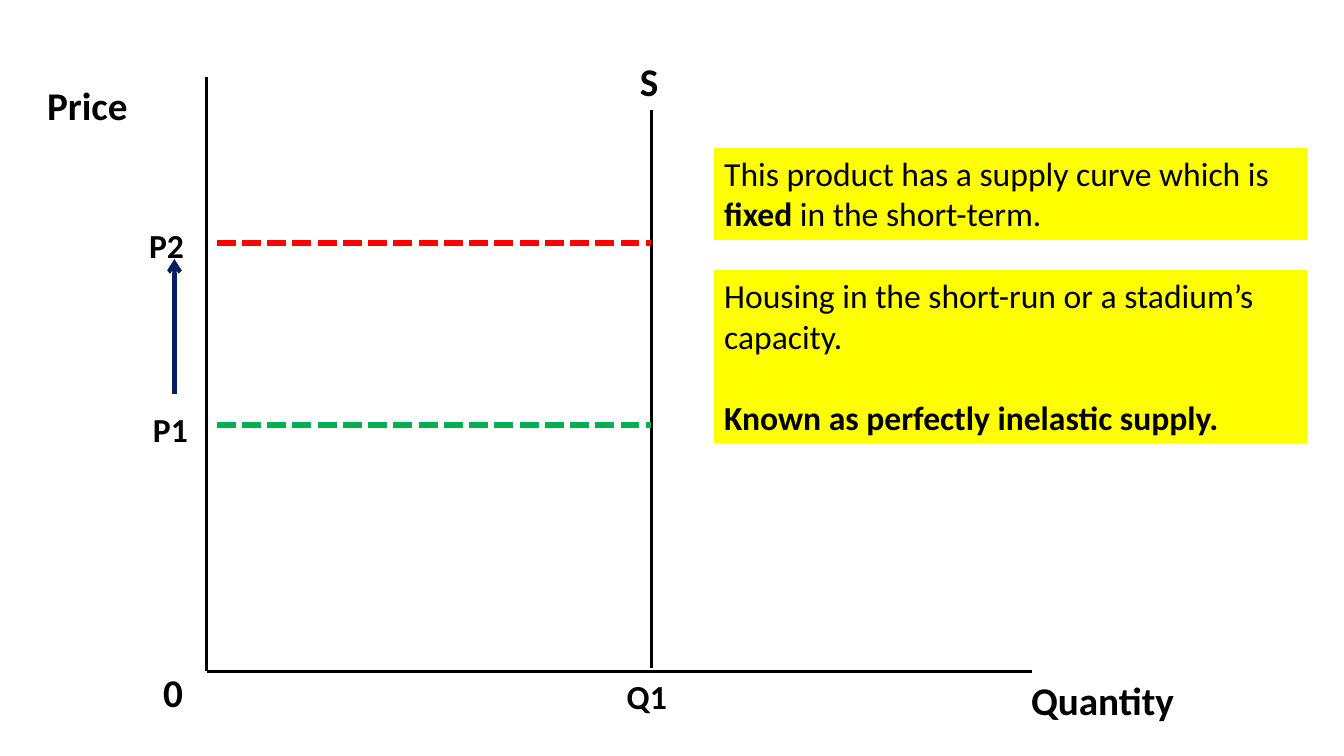
from pptx import Presentation
from pptx.dml.color import RGBColor
from pptx.enum.dml import MSO_LINE
from pptx.enum.shapes import MSO_CONNECTOR, MSO_SHAPE
from pptx.enum.text import MSO_ANCHOR, PP_ALIGN
from pptx.oxml.ns import qn
from pptx.util import Pt
from lxml.etree import SubElement

BLACK = RGBColor(0x00, 0x00, 0x00)
RED = RGBColor(0xFF, 0x00, 0x00)
GREEN = RGBColor(0x00, 0xB0, 0x50)
NAVY = RGBColor(0x00, 0x20, 0x60)
YELLOW = RGBColor(0xFF, 0xFF, 0x00)

ORIGIN_X, ORIGIN_Y = 147.6, 479.5
SUPPLY_X = 465.1


class Diagram:
    font = "Calibri"

    def __init__(self, slide):
        self.s = slide

    def line(self, x1, y1, x2, y2, color=BLACK, width=2.5, dash=None, arrow=False):
        c = self.s.shapes.add_connector(
            MSO_CONNECTOR.STRAIGHT, Pt(x1), Pt(y1), Pt(x2), Pt(y2))
        c.line.color.rgb = color
        c.line.width = Pt(width)
        if dash:
            c.line.dash_style = dash
        if arrow:
            SubElement(c.line._get_or_add_ln(), qn("a:tailEnd"), type="arrow")
        SubElement(c._element.spPr, qn("a:effectLst"))

    def run(self, p, text, size, bold):
        r = p.add_run()
        r.text = text
        r.font.name = self.font
        r.font.size = Pt(size)
        r.font.bold = bold
        r.font.color.rgb = BLACK

    def label(self, text, x, y, w, size=28):
        h = 41.2 if size == 28 else 36.3
        sp = self.s.shapes.add_textbox(Pt(x), Pt(y), Pt(w), Pt(h))
        tf = sp.text_frame
        tf.word_wrap = True
        self.run(tf.paragraphs[0], text, size, True)

    def note(self, y, h, paragraphs, gap=0):
        """Yellow box; each paragraph is a list of (text, bold), None breaks the line."""
        sp = self.s.shapes.add_shape(
            MSO_SHAPE.RECTANGLE, Pt(510.2), Pt(y), Pt(423.5), Pt(h))
        sp.shadow.inherit = False
        sp.fill.solid()
        sp.fill.fore_color.rgb = YELLOW
        sp.line.fill.background()
        tf = sp.text_frame
        tf.word_wrap = True
        tf.vertical_anchor = MSO_ANCHOR.TOP
        for i, runs in enumerate(paragraphs):
            p = tf.add_paragraph() if i else tf.paragraphs[0]
            p.alignment = PP_ALIGN.LEFT
            if i:
                p.space_before = Pt(gap)
            for item in runs:
                if item is None:
                    p.add_line_break()
                else:
                    self.run(p, item[0], 24, item[1])


def main():
    prs = Presentation()
    prs.slide_width, prs.slide_height = Pt(960), Pt(540)
    d = Diagram(prs.slides.add_slide(prs.slide_layouts[6]))

    # Axes
    d.line(ORIGIN_X, 54.7, ORIGIN_X, ORIGIN_Y)
    d.line(737.3, ORIGIN_Y, ORIGIN_X, ORIGIN_Y)
    d.label("Price", 26.6, 54.7, 113)
    d.label("Quantity", 729.4, 479.5, 211.7)
    d.label("0", 109.4, 473.8, 30.2)

    # Supply curve
    d.line(SUPPLY_X, 78.5, SUPPLY_X, 477.4, width=2)
    d.label("S", 450, 37.4, 67.7)
    d.label("Q1", 440.6, 479.5, 75.6, size=24)

    # Price levels
    for name, color, y, x, label_y in (
            ("P2", RED, 173.5, 99.4, 157), ("P1", GREEN, 303.8, 102.2, 288.7)):
        d.line(154.8, y, SUPPLY_X, y, color, 4.5, MSO_LINE.SQUARE_DOT)
        d.label(name, x, label_y, 50, size=24)
    d.line(124.6, 281.5, 124.6, 185, NAVY, 3, arrow=True)

    d.note(105.8, 65.5, [[("This product has a supply curve which is ", False),
                          ("fixed ", True), ("in the short-term.", False)]])
    d.note(193, 123.8, [[("Housing in the short-run or a stadium’s", False), None,
                         ("capacity.", False)],
                        [("Known as perfectly inelastic supply.", True)]], gap=29.3)

    # SQUARE_DOT is written as sysDot; the price levels use the longer sysDash
    for dash in d.s.shapes._spTree.iter(qn("a:prstDash")):
        dash.set("val", "sysDash")

    prs.save("out.pptx")


if __name__ == "__main__":
    main()
